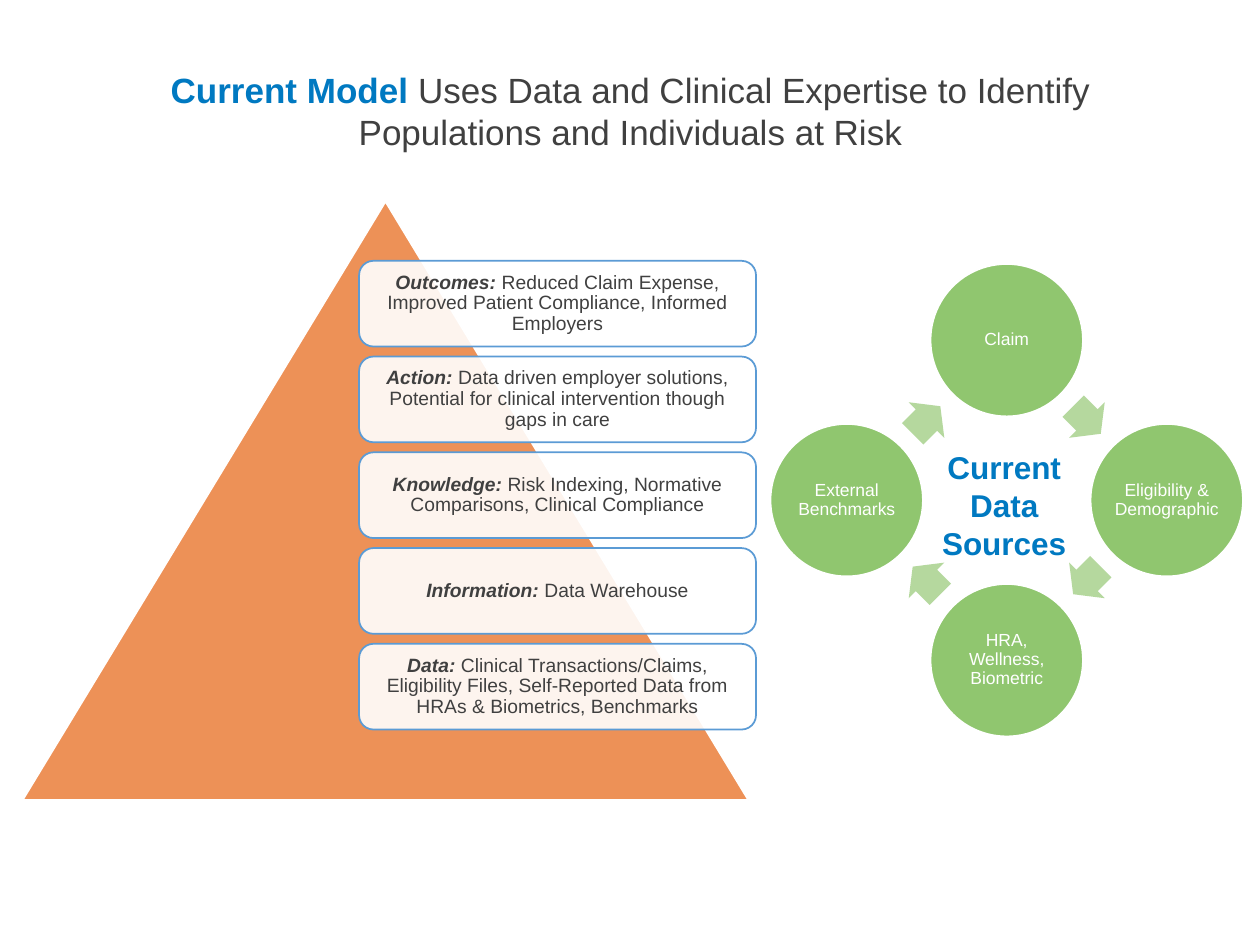
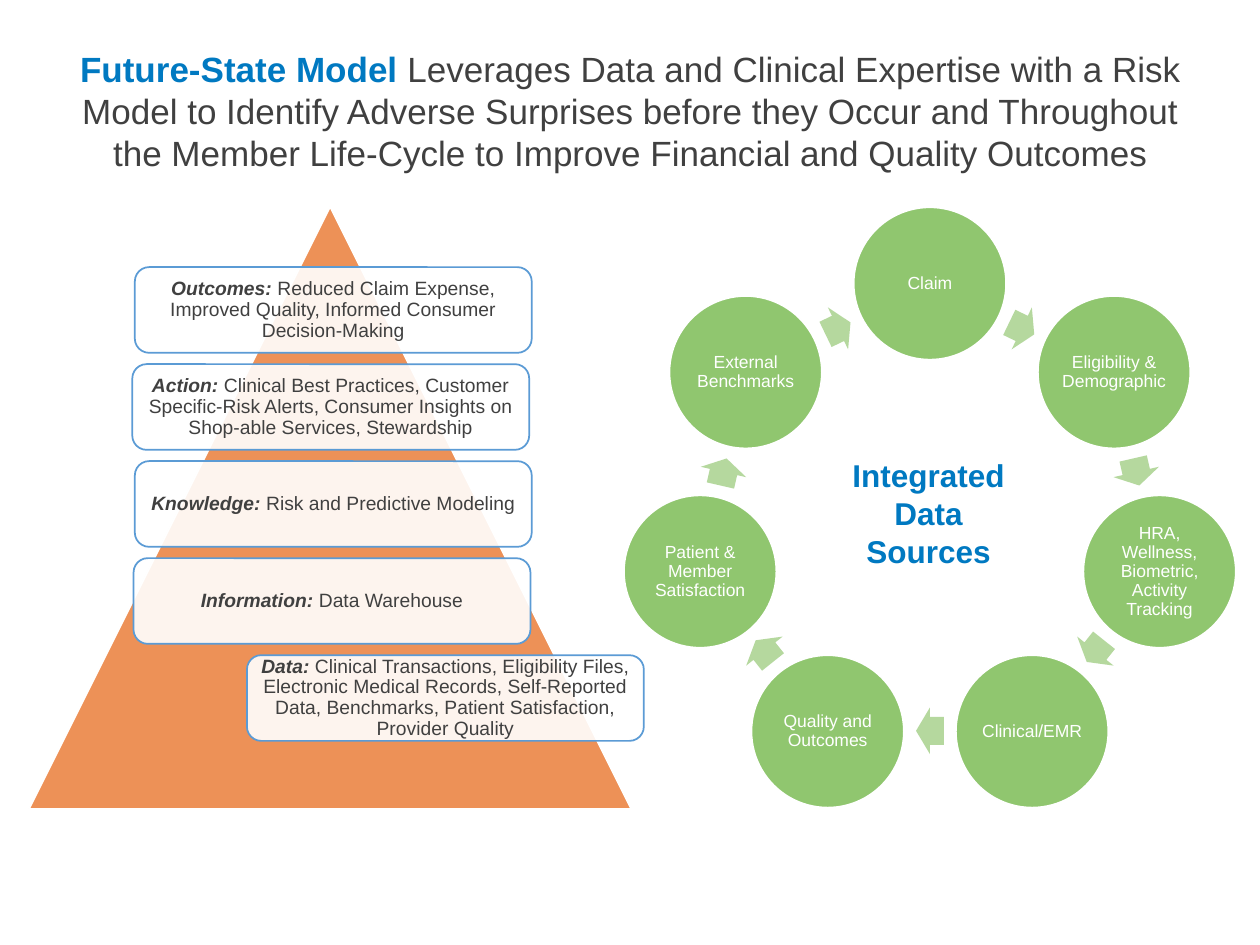
import math
from dataclasses import dataclass

from lxml import etree
from pptx import Presentation
from pptx.dml.color import RGBColor
from pptx.enum import shapes, text
from pptx.oxml import ns
from pptx.util import Inches, Pt

FONT = "Arial"
COLORS = {
    "accent": "0079C1",
    "ink": "404040",
    "white": "FFFFFF",
    "pyramid": "E86D1F",
    "outline": "5B9BD5",
    "source": "6CB33F",
}
BOX_WIDTH, BOX_HEIGHT = 3.15, 0.68
CIRCLE_SIZE = 1.21


@dataclass(frozen=True)
class Area:
    left: float
    top: float
    width: float
    height: float

    def lengths(self) -> list:
        return [Inches(value) for value in (self.left, self.top, self.width, self.height)]


@dataclass(frozen=True)
class Level:
    left: float
    name: str
    detail: str


@dataclass(frozen=True)
class Pyramid:
    area: Area
    first_top: float
    pitch: float
    levels: tuple[Level, ...]


@dataclass(frozen=True)
class Cycle:
    center_x: float
    center_y: float
    radius: float
    arrow_radius: float
    arrow_width: float
    arrow_height: float
    sources: tuple[str, ...]
    caption: tuple[str, ...]
    caption_area: Area


@dataclass(frozen=True)
class ModelSlide:
    lead: str
    title: str
    pyramid: Pyramid
    cycle: Cycle


MODELS = (
    ModelSlide(
        "Current Model",
        "Uses Data and Clinical Expertise to Identify Populations and Individuals at Risk",
        Pyramid(Area(0.18, 1.6, 5.76, 4.75), 2.07, 0.76, (
            Level(2.85, "Outcomes:", "Reduced Claim Expense, Improved Patient Compliance, Informed Employers"),
            Level(2.85, "Action:", "Data driven employer solutions, Potential for clinical "
                  "intervention though gaps in care"),
            Level(2.85, "Knowledge:", "Risk Indexing, Normative Comparisons, Clinical Compliance"),
            Level(2.85, "Information:", "Data Warehouse"),
            Level(2.85, "Data:", "Clinical Transactions/Claims, Eligibility Files, Self-Reported Data "
                  "from HRAs & Biometrics, Benchmarks"),
        )),
        Cycle(7.99, 3.97, 1.27, 0.9, 0.31, 0.4,
              ("Claim", "Eligibility & Demographic", "HRA, Wellness, Biometric", "External Benchmarks"),
              ("Current", "Data Sources"), Area(7.15, 3.51, 1.64, 1.01)),
    ),
    ModelSlide(
        "Future-State Model",
        "Leverages Data and Clinical Expertise with a Risk Model to Identify Adverse Surprises before "
        "they Occur and Throughout the Member Life-Cycle to Improve Financial and Quality Outcomes",
        Pyramid(Area(0.23, 1.64, 4.78, 4.78), 2.12, 0.77, (
            Level(1.07, "Outcomes:", "Reduced Claim Expense, Improved Quality, Informed Consumer Decision-Making"),
            Level(1.05, "Action:", "Clinical Best Practices, Customer Specific-Risk Alerts, Consumer "
                  "Insights on Shop-able Services, Stewardship"),
            Level(1.07, "Knowledge:", "Risk and Predictive Modeling"),
            Level(1.06, "Information:", "Data Warehouse"),
            Level(1.96, "Data:", "Clinical Transactions, Eligibility Files, Electronic Medical Records, "
                  "Self-Reported Data, Benchmarks, Patient Satisfaction, Provider Quality"),
        )),
        Cycle(7.38, 4.12, 1.87, 1.68, 0.22, 0.37,
              ("Claim", "Eligibility & Demographic", "HRA, Wellness, Biometric, Activity Tracking",
               "Clinical/EMR", "Quality and Outcomes", "Patient & Member Satisfaction",
               "External Benchmarks"),
              ("Integrated Data Sources",), Area(6.62, 3.57, 1.5, 1.01)),
    ),
)


def rgb(name: str) -> RGBColor:
    return RGBColor.from_string(COLORS[name])


def add_filled_shape(slide, kind, area: Area, fill: str, opacity: int, line: str | None = None):
    shape = slide.shapes.add_shape(kind, *area.lengths())
    shape.shadow.inherit = False
    shape.fill.solid()
    shape.fill.fore_color.rgb = rgb(fill)
    color = shape.fill._xPr.find(".//" + ns.qn("a:srgbClr"))
    etree.SubElement(color, ns.qn("a:alpha"), val=str(opacity * 1000))
    if line:
        shape.line.color.rgb = rgb(line)
        shape.line.width = Pt(1)
    else:
        shape.line.fill.background()
    return shape


def set_margins(frame, margin: float) -> None:
    frame.word_wrap = True
    frame.vertical_anchor = text.MSO_ANCHOR.MIDDLE
    frame.margin_left = frame.margin_right = Inches(margin)
    frame.margin_top = frame.margin_bottom = Inches(margin)


def format_paragraph(paragraph, size: float, color: str, spacing: float = 1.0, bold: bool = False) -> None:
    paragraph.alignment = text.PP_ALIGN.CENTER
    paragraph.line_spacing = spacing
    font = paragraph.font
    font.name, font.size, font.bold = FONT, Pt(size), bold
    font.color.rgb = rgb(color)


def add_lead_and_rest(paragraph, lead: str, rest: str):
    lead_run = paragraph.add_run()
    lead_run.text = lead + " "
    lead_run.font.bold = True
    paragraph.add_run().text = rest
    return lead_run


def set_title(slide, model: ModelSlide) -> None:
    title = slide.shapes.title
    title.left, title.top, title.width, title.height = Area(0.53, 0.15, 8.95, 1.45).lengths()
    frame = title.text_frame
    frame.auto_size = text.MSO_AUTO_SIZE.NONE
    frame.vertical_anchor = text.MSO_ANCHOR.MIDDLE
    paragraph = frame.paragraphs[0]
    format_paragraph(paragraph, 20, "ink")
    lead_run = add_lead_and_rest(paragraph, model.lead, model.title)
    lead_run.font.color.rgb = rgb("accent")


def draw_pyramid(slide, pyramid: Pyramid) -> None:
    kinds = shapes.MSO_SHAPE
    add_filled_shape(slide, kinds.ISOSCELES_TRIANGLE, pyramid.area, "pyramid", 75, "white")
    for index, level in enumerate(pyramid.levels):
        area = Area(level.left, pyramid.first_top + index * pyramid.pitch, BOX_WIDTH, BOX_HEIGHT)
        box = add_filled_shape(slide, kinds.ROUNDED_RECTANGLE, area, "white", 90, "outline")
        set_margins(box.text_frame, 0.05)
        paragraph = box.text_frame.paragraphs[0]
        format_paragraph(paragraph, 11, "ink", 0.9)
        add_lead_and_rest(paragraph, level.name, level.detail).font.italic = True


def area_on_ring(cycle: Cycle, degrees: float, radius: float, width: float, height: float) -> Area:
    angle = math.radians(degrees)
    center_x = cycle.center_x + radius * math.sin(angle)
    center_y = cycle.center_y - radius * math.cos(angle)
    return Area(center_x - width / 2, center_y - height / 2, width, height)


def draw_cycle(slide, cycle: Cycle) -> None:
    kinds = shapes.MSO_SHAPE
    step = 360 / len(cycle.sources)
    for index, source in enumerate(cycle.sources):
        area = area_on_ring(cycle, index * step, cycle.radius, CIRCLE_SIZE, CIRCLE_SIZE)
        circle = add_filled_shape(slide, kinds.OVAL, area, "source", 75, "white")
        set_margins(circle.text_frame, 0.01)
        circle.text_frame.text = source
        format_paragraph(circle.text_frame.paragraphs[0], 10, "white", 0.9)

        degrees = (index + 0.5) * step
        area = area_on_ring(cycle, degrees, cycle.arrow_radius, cycle.arrow_width, cycle.arrow_height)
        arrow = add_filled_shape(slide, kinds.RIGHT_ARROW, area, "source", 50)
        arrow.adjustments[0] = 0.6
        arrow.adjustments[1] = 0.5
        arrow.rotation = degrees

    caption = slide.shapes.add_textbox(*cycle.caption_area.lengths())
    caption.text_frame.word_wrap = True
    caption.text_frame.text = "\n".join(cycle.caption)
    for paragraph in caption.text_frame.paragraphs:
        format_paragraph(paragraph, 18, "accent", bold=True)


def main() -> None:
    presentation = Presentation()
    presentation.slide_width, presentation.slide_height = Inches(10), Inches(7.5)
    title_only = presentation.slide_layouts[5]
    for model in MODELS:
        slide = presentation.slides.add_slide(title_only)
        set_title(slide, model)
        draw_pyramid(slide, model.pyramid)
        draw_cycle(slide, model.cycle)
    presentation.save("out.pptx")


if __name__ == "__main__":
    main()
